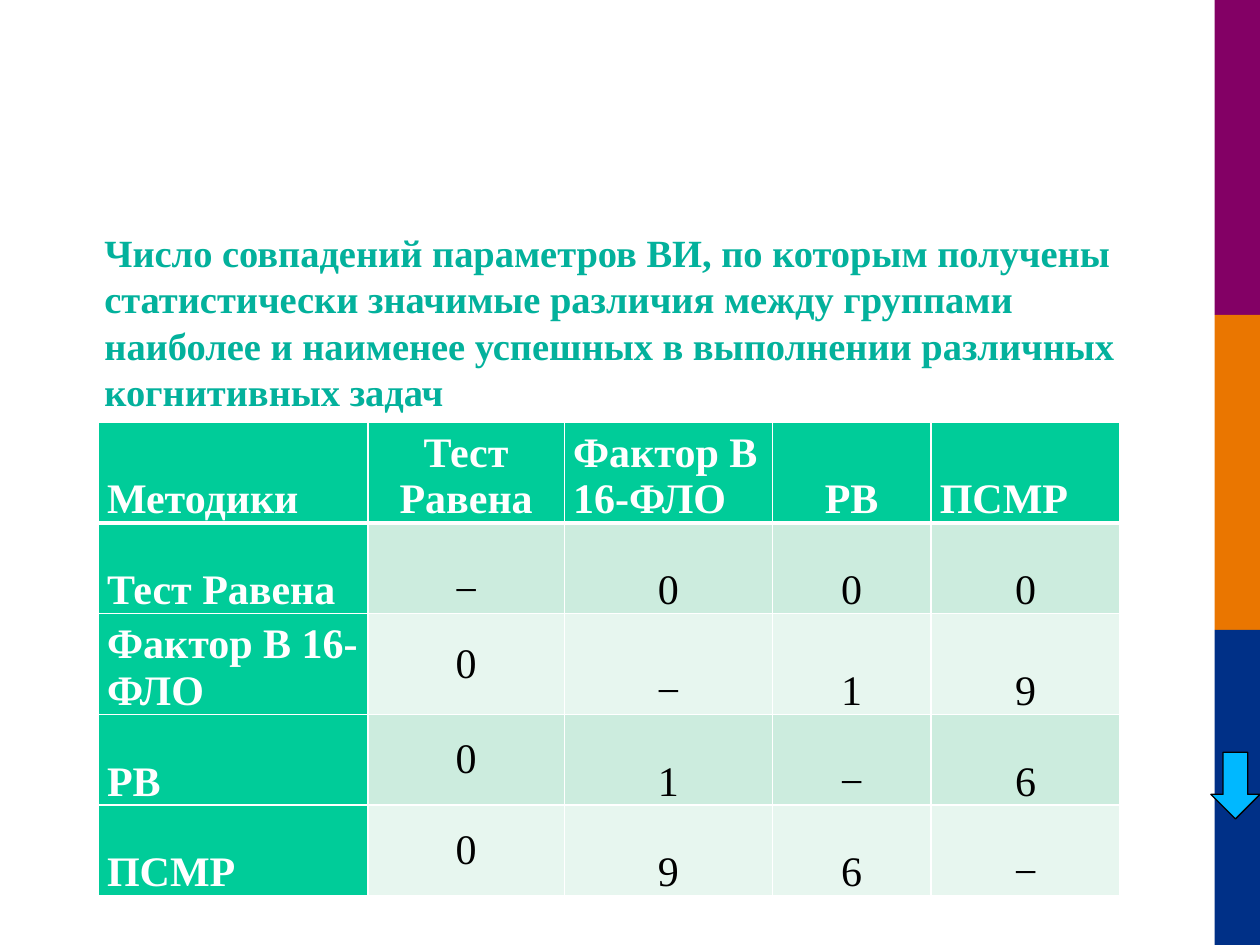
from lxml import etree
from pptx import Presentation
from pptx import util as u
from pptx.dml.color import RGBColor
from pptx.enum import shapes, text
from pptx.oxml import ns

WHITE = RGBColor(0xFF, 0xFF, 0xFF)
BLACK = RGBColor(0, 0, 0)
PLUM = RGBColor(0x83, 0x00, 0x65)
ORANGE = RGBColor(0xEA, 0x76, 0x00)
NAVY = RGBColor(0x00, 0x30, 0x87)
SKY = RGBColor(0x00, 0xB8, 0xFF)
TEAL = RGBColor(0x03, 0xB1, 0x9C)
GREEN = RGBColor(0x00, 0xCC, 0x99)
MINT = RGBColor(0xCC, 0xEC, 0xDE)
PALE = RGBColor(0xE7, 0xF6, 0xEF)

TITLE = ("Число совпадений параметров ВИ, по которым получены "
         "статистически значимые различия между группами наиболее и "
         "наименее успешных в выполнении различных когнитивных задач")
ROWS = [
    ["Методики", "Тест Равена", "Фактор В 16-ФЛО", "РВ", "ПСМР"],
    ["Тест Равена", "−", "0", "0", "0"],
    ["Фактор В 16-ФЛО", "0", "−", "1", "9"],
    ["РВ", "0", "1", "−", "6"],
    ["ПСМР", "0", "9", "6", "−"],
]
WIDTHS = [2.14, 1.56, 1.65, 1.26, 1.5]
HEIGHTS = [0.8, 0.72, 0.8, 0.72, 0.72]


class Page:
    font = "Times New Roman"

    def __init__(self, slide):
        self.slide = slide

    def style(self, frame, size, color, bold, align=text.PP_ALIGN.LEFT):
        for para in frame.paragraphs:
            para.alignment = align
            for run in para.runs:
                run.font.name = self.font
                run.font.size = u.Pt(size)
                run.font.color.rgb = color
                run.font.bold = bold

    def shape(self, kind, x, y, w, h, fill, line=None):
        item = self.slide.shapes.add_shape(
            kind, u.Inches(x), u.Inches(y), u.Inches(w), u.Inches(h))
        item.shadow.inherit = False
        item.fill.solid()
        item.fill.fore_color.rgb = fill
        if line is None:
            item.line.fill.background()
        else:
            item.line.color.rgb = line
            item.line.width = u.Pt(0.75)

    def label(self, words, x, y, w, h, size, color):
        box = self.slide.shapes.add_textbox(
            u.Inches(x), u.Inches(y), u.Inches(w), u.Inches(h))
        frame = box.text_frame
        frame.word_wrap = True
        frame.auto_size = text.MSO_AUTO_SIZE.SHAPE_TO_FIT_TEXT
        frame.text = words
        self.style(frame, size, color, True)

    def border(self, cell, side, width):
        props = cell._tc.get_or_add_tcPr()
        line = etree.SubElement(props, ns.qn(f"a:ln{side}"), w=str(u.Pt(width)))
        fill = etree.SubElement(line, ns.qn("a:solidFill"))
        etree.SubElement(fill, ns.qn("a:srgbClr"), val=str(WHITE))

    def cell(self, cell, words, row, col):
        head = row == 0 or col == 0
        cell.text = words
        cell.margin_left = cell.margin_right = u.Inches(0.07)
        cell.margin_top = cell.margin_bottom = 0
        # The first column of results is centred below its first row
        middle = col == 1 and row > 1
        cell.vertical_anchor = (text.MSO_ANCHOR.MIDDLE if middle
                                else text.MSO_ANCHOR.BOTTOM)
        left = col == 0 or (row == 0 and col in (2, 4))
        align = text.PP_ALIGN.LEFT if left else text.PP_ALIGN.CENTER
        self.style(cell.text_frame, 24, WHITE if head else BLACK, head, align)
        # Borders come before the fill; a thick rule runs under the header
        thick = {(0, "B"), (1, "T")}
        for side in "LRTB":
            self.border(cell, side, 3 if (row, side) in thick else 1)
        cell.fill.solid()
        cell.fill.fore_color.rgb = GREEN if head else MINT if row % 2 else PALE

    def table(self, rows, x, y, widths, heights):
        grid = self.slide.shapes.add_table(
            len(rows), len(widths), u.Inches(x), u.Inches(y),
            u.Inches(sum(widths)), u.Inches(sum(heights))).table
        for col, width in zip(grid.columns, widths):
            col.width = u.Inches(width)
        for r, (line, height) in enumerate(zip(rows, heights)):
            grid.rows[r].height = u.Inches(height)
            for c, words in enumerate(line):
                self.cell(grid.cell(r, c), words, r, c)


def main():
    deck = Presentation()
    deck.slide_width, deck.slide_height = u.Inches(10), u.Inches(7.5)
    page = Page(deck.slides.add_slide(deck.slide_layouts[6]))
    kinds = shapes.MSO_SHAPE

    # Colour bands on the right edge
    band = 7.5 / 3
    for i, color in enumerate((PLUM, ORANGE, NAVY)):
        page.shape(kinds.RECTANGLE, 9.64, i * band, 0.36, band, color)

    # Results table and its heading
    page.table(ROWS, 0.78, 3.35, WIDTHS, HEIGHTS)
    page.label(TITLE, 0.73, 1.77, 8.39, 1.57, 22, TEAL)

    # Arrow
    page.shape(kinds.DOWN_ARROW, 9.61, 5.97, 0.39, 0.53, SKY, BLACK)

    deck.save("out.pptx")


if __name__ == "__main__":
    main()
